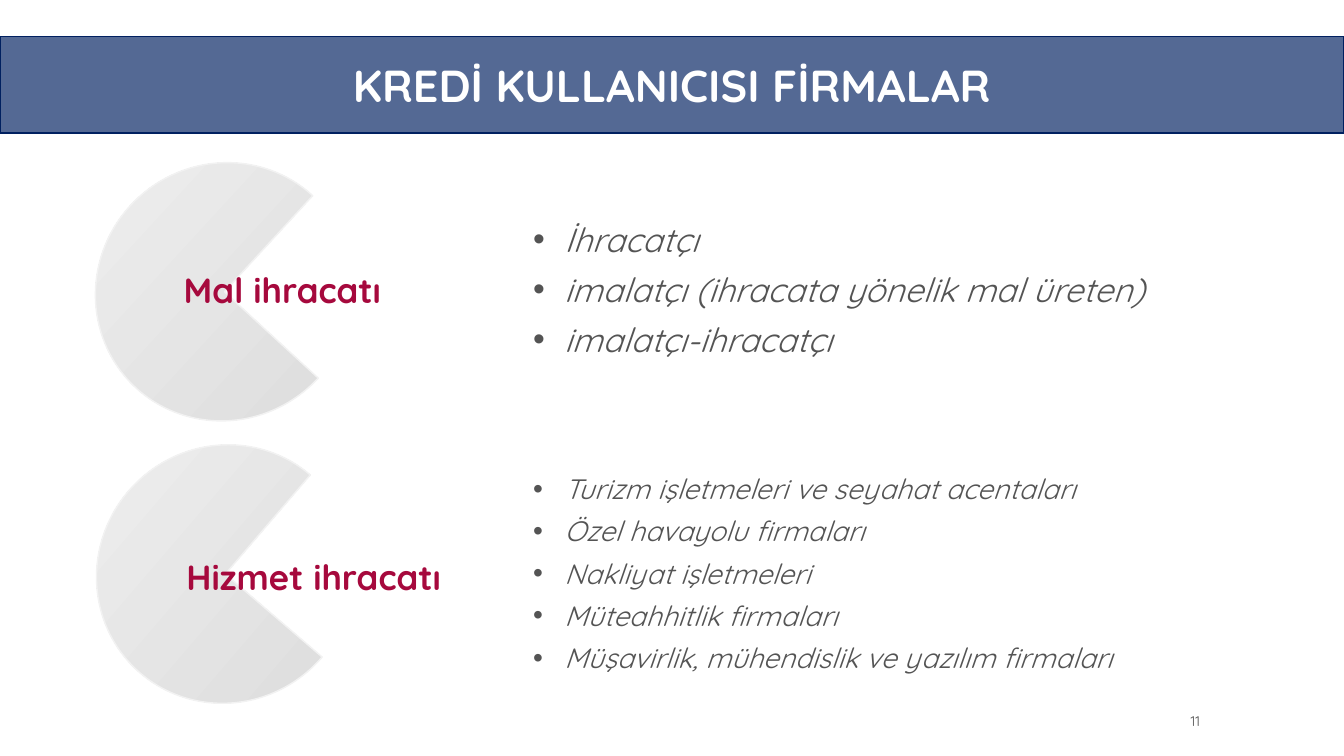
import dataclasses

import pptx
import pptx.dml.color
import pptx.enum.shapes
import pptx.enum.text
import pptx.oxml
import pptx.oxml.ns
import pptx.util

Inches = pptx.util.Inches
Pt = pptx.util.Pt
Align = pptx.enum.text.PP_ALIGN
Anchor = pptx.enum.text.MSO_ANCHOR

FONT = "Quicksand"
NAVY, RED, GREY, WHITE = "002060", "A6093D", "545454", "FFFFFF"
DARK, LIGHT = "D8D8D8", "F2F2F2"
INDENT = Inches(0.31)


@dataclasses.dataclass
class Box:
    left: float
    top: float
    width: float
    height: float

    def sides(self) -> list:
        return [Inches(n) for n in (self.left, self.top, self.width, self.height)]


@dataclasses.dataclass
class Group:
    label: str
    pie: Box
    turn: float
    name: Box
    body: Box
    size: float
    gap: float
    items: list[str]


GROUPS = [
    Group("Mal ihracatı", Box(0.96, 1.6, 2.53, 2.59), 42.6,
          Box(1.15, 2.61, 3.3, 0.52), Box(5.19, 2.12, 6.62, 1.55), 24, 7,
          ["İhracatçı", "imalatçı (ihracata yönelik mal üreten)",
           "imalatçı-ihracatçı"]),
    Group("Hizmet ihracatı", Box(0.97, 4.4, 2.53, 2.59), 40.6,
          Box(1.15, 5.46, 3.92, 0.52), Box(5.19, 4.63, 6.51, 2.19), 20, 6.2,
          ["Turizm işletmeleri ve seyahat acentaları",
           "Özel havayolu firmaları", "Nakliyat işletmeleri",
           "Müteahhitlik firmaları",
           "Müşavirlik, mühendislik ve yazılım firmaları"]),
]


def color(code: str) -> pptx.dml.color.RGBColor:
    return pptx.dml.color.RGBColor.from_string(code)


def style(para, size: float, code: str, bold: bool = False,
          italic: bool = False) -> None:
    font = para.font
    font.name, font.size = FONT, Pt(size)
    font.bold, font.italic = bold, italic
    font.color.rgb = color(code)


def add_text(slide, box: Box, lines: list[str]):
    frame = slide.shapes.add_textbox(*box.sides()).text_frame
    frame.word_wrap = True
    frame.text = "\n".join(lines)
    return frame


def add_bullet(para) -> None:
    props = para._p.get_or_add_pPr()
    props.set("marL", str(INDENT))
    props.set("indent", str(-INDENT))
    space = pptx.oxml.ns.nsdecls("a")
    for xml in (f'<a:buFont {space} typeface="Arial"/>',
                f'<a:buChar {space} char="•"/>'):
        props.append(pptx.oxml.parse_xml(xml))


def add_pie(slide, box: Box, turn: float) -> None:
    pie = slide.shapes.add_shape(pptx.enum.shapes.MSO_SHAPE.PIE, *box.sides())
    pie.rotation = turn
    pie.shadow.inherit = False
    pie.fill.gradient()
    pie.fill.gradient_angle = 180
    for stop, code in zip(pie.fill.gradient_stops, (DARK, LIGHT)):
        stop.color.rgb = color(code)
    pie.line.color.rgb = color(LIGHT)
    pie.line.width = Pt(1)


def add_group(slide, group: Group) -> None:
    add_pie(slide, group.pie, group.turn)

    name = add_text(slide, group.name, [group.label]).paragraphs[0]
    name.alignment = Align.CENTER
    style(name, 25, RED, bold=True)

    body = add_text(slide, group.body, group.items)
    for index, para in enumerate(body.paragraphs):
        add_bullet(para)
        if index:
            para.space_before = Pt(group.gap)
        style(para, group.size, GREY, italic=True)


def set_title(slide, text: str) -> None:
    title = slide.shapes.title
    title.left, title.top, title.width, title.height = Box(
        0, 0.36, 13.33, 0.96).sides()
    title.fill.solid()
    title.fill.fore_color.rgb = color(NAVY)
    # Let the white background show through the band
    tint = title._element.spPr.find(".//" + pptx.oxml.ns.qn("a:srgbClr"))
    tint.append(pptx.oxml.parse_xml(
        f'<a:alpha {pptx.oxml.ns.nsdecls("a")} val="67000"/>'))
    title.line.color.rgb = color(NAVY)
    title.line.width = Pt(1)
    frame = title.text_frame
    frame.text = text
    frame.auto_size = pptx.enum.text.MSO_AUTO_SIZE.NONE
    frame.vertical_anchor = Anchor.MIDDLE
    frame.paragraphs[0].alignment = Align.CENTER
    style(frame.paragraphs[0], 32, WHITE, bold=True)


def main() -> None:
    deck = pptx.Presentation()
    deck.slide_width, deck.slide_height = Inches(13.33), Inches(7.5)
    slide = deck.slides.add_slide(deck.slide_layouts.get_by_name("Title Only"))

    # Title band
    set_title(slide, "KREDİ KULLANICISI FİRMALAR")

    # Export groups
    for group in GROUPS:
        add_group(slide, group)

    # Page number
    page = add_text(slide, Box(10.75, 7.05, 1.25, 0.2), ["11"])
    page.vertical_anchor = Anchor.MIDDLE
    page.paragraphs[0].alignment = Align.RIGHT
    style(page.paragraphs[0], 10, GREY)

    deck.save("out.pptx")


if __name__ == "__main__":
    main()
